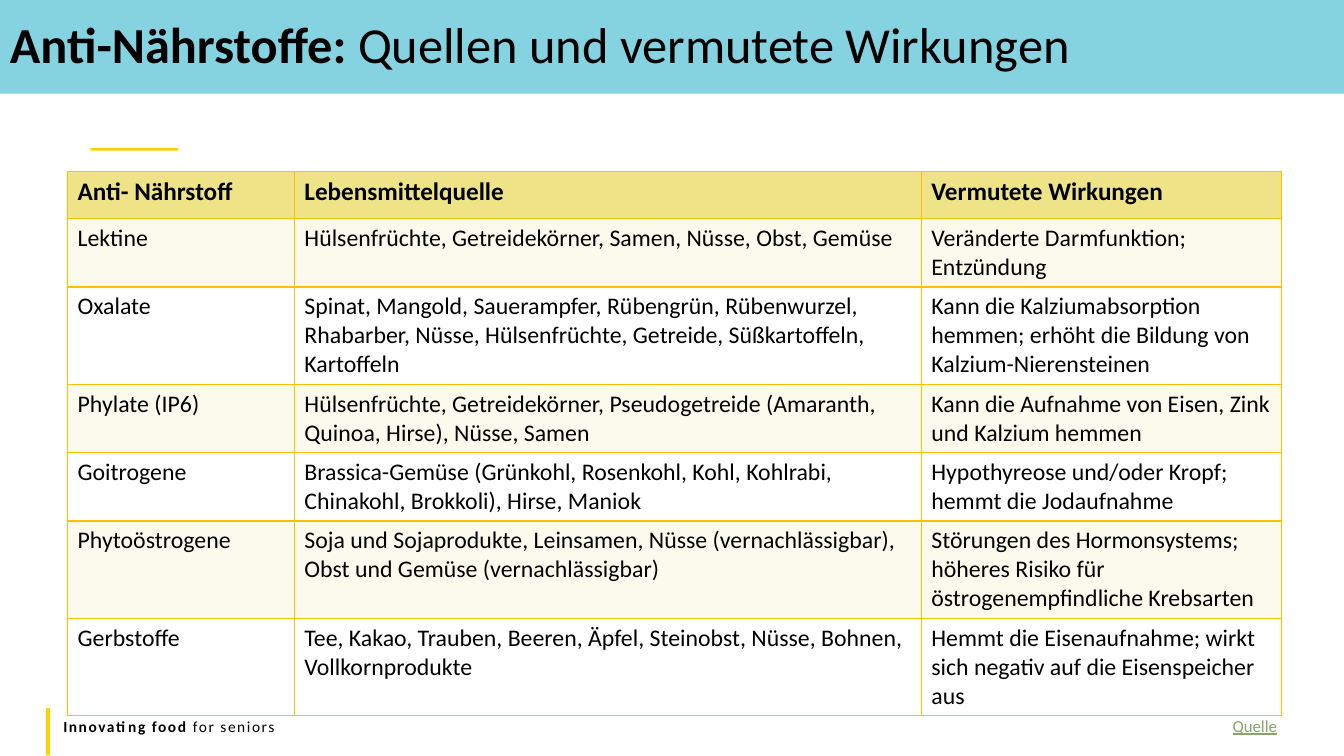
from lxml import etree
from pptx import Presentation
from pptx.dml.color import RGBColor
from pptx.enum.shapes import MSO_SHAPE
from pptx.enum.text import MSO_ANCHOR, MSO_AUTO_SIZE, PP_ALIGN
from pptx.oxml.ns import qn
from pptx.util import Pt

RECTANGLE = MSO_SHAPE.RECTANGLE
MIDDLE = MSO_ANCHOR.MIDDLE
LEFT = PP_ALIGN.LEFT
GROW = MSO_AUTO_SIZE.SHAPE_TO_FIT_TEXT

FONT = "Calibri"
BLACK, YELLOW, BLUE, GREEN = "000000", "FFD100", "85D2E1", "87A66E"
GRID, HEADER = "FFC000", "EEE387"
BANDS = ("FCFAED", "FFFFFF")
COLUMN_WIDTHS = (162, 447.84, 257.04)
HEADER_HEIGHT, ROW_HEIGHT = 33.84, 29.52

ROWS = (
    ("Anti- Nährstoff", "Lebensmittelquelle", "Vermutete Wirkungen"),
    ("Lektine",
     "Hülsenfrüchte, Getreidekörner, Samen, Nüsse, Obst, Gemüse",
     "Veränderte Darmfunktion; Entzündung"),
    ("Oxalate",
     "Spinat, Mangold, Sauerampfer, Rübengrün, Rübenwurzel, Rhabarber, "
     "Nüsse, Hülsenfrüchte, Getreide, Süßkartoffeln, Kartoffeln",
     "Kann die Kalziumabsorption hemmen; erhöht die Bildung von "
     "Kalzium-Nierensteinen"),
    ("Phylate (IP6)",
     "Hülsenfrüchte, Getreidekörner, Pseudogetreide (Amaranth, Quinoa, "
     "Hirse), Nüsse, Samen",
     "Kann die Aufnahme von Eisen, Zink und Kalzium hemmen"),
    ("Goitrogene",
     "Brassica-Gemüse (Grünkohl, Rosenkohl, Kohl, Kohlrabi, Chinakohl, "
     "Brokkoli), Hirse, Maniok",
     "Hypothyreose und/oder Kropf; hemmt die Jodaufnahme"),
    ("Phytoöstrogene",
     "Soja und Sojaprodukte, Leinsamen, Nüsse (vernachlässigbar), Obst und "
     "Gemüse (vernachlässigbar)",
     "Störungen des Hormonsystems; höheres Risiko für "
     "östrogenempfindliche Krebsarten"),
    ("Gerbstoffe",
     "Tee, Kakao, Trauben, Beeren, Äpfel, Steinobst, Nüsse, Bohnen, "
     "Vollkornprodukte",
     "Hemmt die Eisenaufnahme; wirkt sich negativ auf die Eisenspeicher aus"),
)


def color(hex_code):
    """Turn a hex string into a colour."""
    return RGBColor.from_string(hex_code)


def paint(target, hex_code):
    """Fill a shape or cell with one solid colour."""
    target.fill.solid()
    target.fill.fore_color.rgb = color(hex_code)


def add_span(para, text, size, hex_code=BLACK, **formats):
    """Append a formatted run to a paragraph."""
    span = para.add_run()
    span.text = text
    for name, value in {"name": FONT, "size": Pt(size), **formats}.items():
        setattr(span.font, name, value)
    span.font.color.rgb = color(hex_code)
    return span


def add_bar(page, left, top, width, height, hex_code):
    """Draw a plain filled rectangle."""
    bar = page.shapes.add_shape(RECTANGLE, Pt(left), Pt(top), Pt(width), Pt(height))
    bar.shadow.inherit = False
    bar.line.fill.background()
    paint(bar, hex_code)
    return bar


def add_label(page, left, top, width, height):
    """Add a growing text box and return its first paragraph."""
    box = page.shapes.add_textbox(Pt(left), Pt(top), Pt(width), Pt(height))
    box.text_frame.word_wrap = True
    box.text_frame.auto_size = GROW
    return box.text_frame.paragraphs[0]


def add_title(page, left, top, width, height):
    """Build the title band and the short accent line below it."""
    band = add_bar(page, left, top, width, height, BLUE)
    band.text_frame.word_wrap = True
    band.text_frame.vertical_anchor = MIDDLE
    para = band.text_frame.paragraphs[0]
    para.alignment = LEFT
    para.line_spacing = 0.9
    add_span(para, "Anti-Nährstoffe: ", 36, bold=True)
    add_span(para, "Quellen und vermutete Wirkungen", 36, bold=False)
    add_bar(page, left + 64.8, top + height + 38.9, 62.64, 1.8, YELLOW)


def add_borders(cell):
    """Draw a thin line on all four sides of a cell."""
    properties = cell._tc.get_or_add_tcPr()
    for position, side in enumerate(("lnL", "lnR", "lnT", "lnB")):
        line = etree.Element(qn(f"a:{side}"), w=str(Pt(1)))
        fill = etree.SubElement(line, qn("a:solidFill"))
        etree.SubElement(fill, qn("a:srgbClr"), val=GRID)
        properties.insert(position, line)


def add_nutrient_table(page, left, top, width, height):
    """Build the table of anti-nutrients, sources and effects."""
    frame = page.shapes.add_table(
        len(ROWS), len(COLUMN_WIDTHS), Pt(left), Pt(top), Pt(width), Pt(height))
    table = frame.table
    for column, column_width in zip(table.columns, COLUMN_WIDTHS):
        column.width = Pt(column_width)
    for index, texts in enumerate(ROWS):
        is_header = index == 0
        table.rows[index].height = Pt(HEADER_HEIGHT if is_header else ROW_HEIGHT)
        for cell, text in zip(table.rows[index].cells, texts):
            paint(cell, HEADER if is_header else BANDS[(index - 1) % 2])
            add_borders(cell)
            add_span(cell.text_frame.paragraphs[0], text,
                     18 if is_header else 17, bold=is_header)
    frame.height = Pt(height)


def add_footer(page, left, top, width, height):
    """Build the footer with its upright bar, motto and source label."""
    add_bar(page, left, top, 2.88, height, YELLOW)
    motto = add_label(page, left + 5.4, top + 3.2, 864, 20.88)
    for text, bold in (("Innovating food ", True), ("for seniors", False)):
        span = add_span(motto, text, 11, bold=bold)
        span._r.get_or_add_rPr().set("spc", "110")
    source = add_label(page, left + width - 48.24, top + 1.8, 48.24, 21.6)
    add_span(source, "Quelle", 12, GREEN, underline=True)


def main():
    """Assemble the slide and save the deck."""
    deck = Presentation()
    deck.slide_width, deck.slide_height = Pt(960), Pt(540)
    page = deck.slides.add_slide(deck.slide_layouts[6])
    add_nutrient_table(page, 48.24, 122.4, 866.88, 383.04)
    add_title(page, 0, 0, 960, 66.96)
    add_footer(page, 32.76, 505.8, 888.84, 33.84)
    deck.save("out.pptx")


if __name__ == "__main__":
    main()
